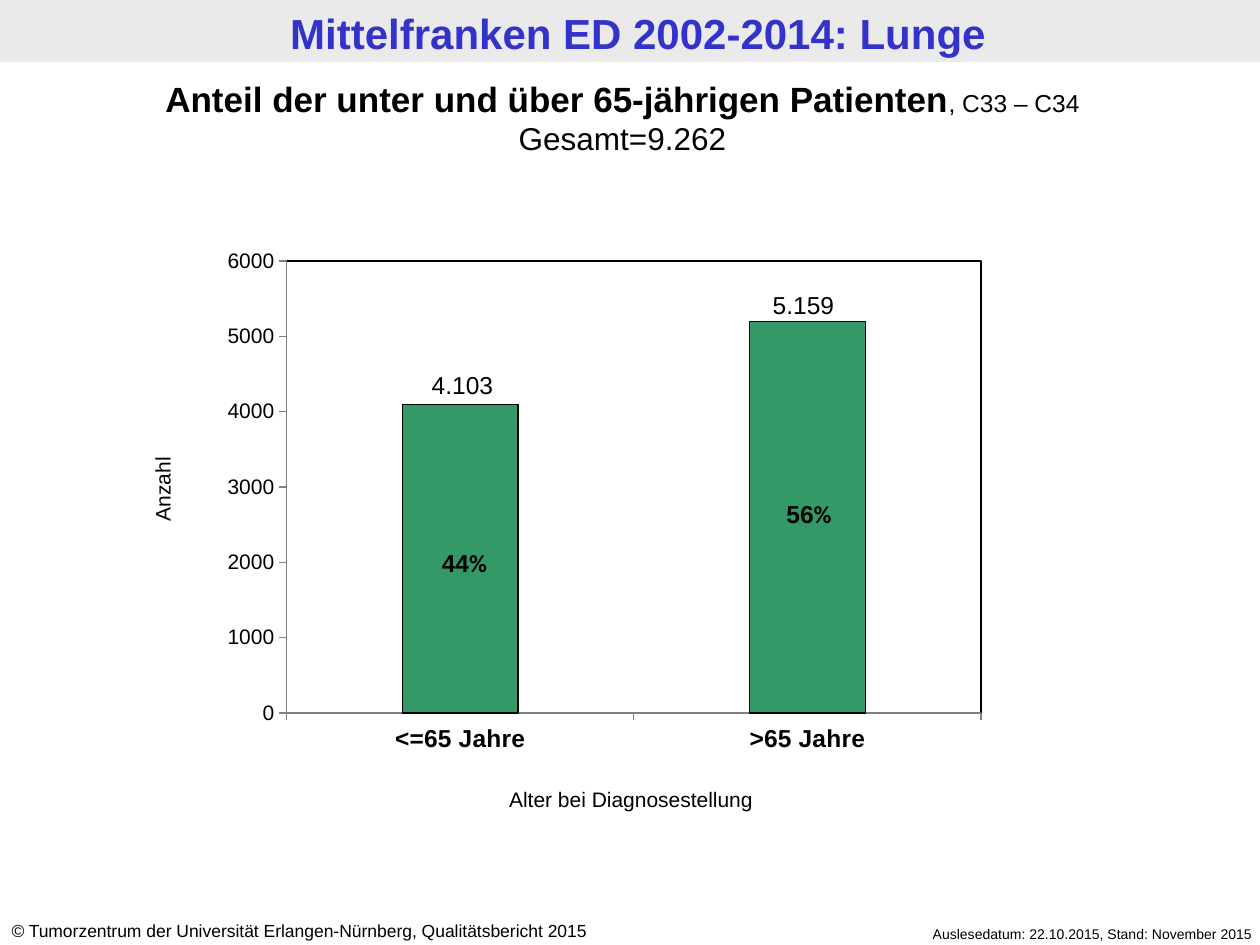
import pptx
import pptx.chart.data
import pptx.dml.color
import pptx.enum.chart
import pptx.enum.shapes
import pptx.enum.text
import pptx.oxml
import pptx.oxml.ns
import pptx.util

SCALE = 914400 / 126
ALIGN = pptx.enum.text.PP_ALIGN
BLACK = "000000"
AXIS_GREY = "808080"


def px(length):
    return pptx.util.Emu(round(length * SCALE))


def colour(code):
    return pptx.dml.color.RGBColor.from_string(code)


def set_font(font, size, code=BLACK, **extra):
    values = {"name": "Arial", "size": pptx.util.Pt(size), "bold": False, **extra}
    for key, value in values.items():
        setattr(font, key, value)
    font.color.rgb = colour(code)


def set_line(line, code, width=0.75):
    line.color.rgb = colour(code)
    line.width = pptx.util.Pt(width)


def fill_text(box, paragraphs, align):
    frame = box.text_frame
    values = {
        "word_wrap": True,
        "auto_size": pptx.enum.text.MSO_AUTO_SIZE.NONE,
        "vertical_anchor": pptx.enum.text.MSO_ANCHOR.TOP,
    }
    for key, value in values.items():
        setattr(frame, key, value)
    for index, runs in enumerate(paragraphs):
        paragraph = frame.add_paragraph() if index else frame.paragraphs[0]
        paragraph.alignment = align
        for text, style in runs:
            run = paragraph.add_run()
            run.text = text
            set_font(run.font, **style)


def add_text(slide, place, runs, align=ALIGN.CENTER, rotation=0):
    box = slide.shapes.add_textbox(*map(px, place))
    box.rotation = rotation
    fill_text(box, [runs], align)


def add_band(slide, place, code):
    band = slide.shapes.add_shape(
        pptx.enum.shapes.MSO_SHAPE.RECTANGLE, *map(px, place)
    )
    band.shadow.inherit = False
    band.fill.solid()
    band.fill.fore_color.rgb = colour(code)
    band.line.fill.background()


def set_title(slide, place, paragraphs):
    title = slide.shapes.title
    for key, length in zip(("left", "top", "width", "height"), place):
        setattr(title, key, px(length))
    fill_text(title, paragraphs, ALIGN.CENTER)


def frame_plot(chart, x, y, w, h):
    names = pptx.oxml.ns.nsdecls("c", "a")
    area = chart._chartSpace.chart.plotArea
    for old in area.findall(pptx.oxml.ns.qn("c:layout")):
        area.remove(old)
    sizes = "".join(
        f'<c:{key} val="{value}"/>' for key, value in zip("xywh", (x, y, w, h))
    )
    area.insert(0, pptx.oxml.parse_xml(
        f'<c:layout {names}><c:manualLayout><c:layoutTarget val="inner"/>'
        f'<c:xMode val="edge"/><c:yMode val="edge"/>{sizes}'
        "</c:manualLayout></c:layout>"
    ))
    area.append(pptx.oxml.parse_xml(
        f'<c:spPr {names}><a:noFill/><a:ln w="9525"><a:solidFill>'
        f'<a:srgbClr val="{BLACK}"/></a:solidFill></a:ln></c:spPr>'
    ))


def add_age_chart(slide, place, ages, counts):
    data = pptx.chart.data.CategoryChartData()
    data.categories = ages
    data.add_series("Anzahl", counts)
    chart = slide.shapes.add_chart(
        pptx.enum.chart.XL_CHART_TYPE.COLUMN_STACKED, *map(px, place), data
    ).chart
    chart.has_legend = False
    chart.has_title = False
    set_font(chart.font, 18, name="Calibri")

    plot = chart.plots[0]
    for key, value in {"gap_width": 200, "overlap": 100, "vary_by_categories": False}.items():
        setattr(plot, key, value)
    bars = plot.series[0].format
    bars.fill.solid()
    bars.fill.fore_color.rgb = colour("339966")
    set_line(bars.line, BLACK)

    scale = {"minimum_scale": 0, "maximum_scale": 6000, "major_unit": 1000}
    for key, value in scale.items():
        setattr(chart.value_axis, key, value)
    chart.value_axis.tick_labels.number_format = "0"
    chart.value_axis.tick_labels.number_format_is_linked = False
    for axis, size, bold in ((chart.category_axis, 14, True), (chart.value_axis, 12, False)):
        axis.has_major_gridlines = False
        axis.major_tick_mark = pptx.enum.chart.XL_TICK_MARK.OUTSIDE
        set_font(axis.tick_labels.font, size, bold=bold)
        set_line(axis.format.line, AXIS_GREY)
    frame_plot(chart, 0.11, 0.14, 0.79, 0.77)


def main():
    deck = pptx.Presentation()
    deck.slide_width, deck.slide_height = px(1260), px(945)
    slide = deck.slides.add_slide(deck.slide_layouts[5])

    set_title(slide, (0, 71, 1245, 93), [
        [("Anteil der unter und über 65-jährigen Patienten", {"size": 20, "bold": True}),
         (", C33 – C34", {"size": 14})],
        [("Gesamt=9.262", {"size": 18})],
    ])
    add_band(slide, (0, 0, 1260, 62), "EAEAEA")
    add_text(slide, (8, 1, 1260, 62), [
        ("Mittelfranken ED 2002-2014: Lunge", {"size": 24, "code": "3333CC", "bold": True}),
    ])
    add_text(slide, (838, 919, 427, 30), [
        ("Auslesedatum: 22.10.2015, Stand: November 2015", {"size": 8}),
    ], ALIGN.RIGHT)
    add_text(slide, (-1, 914, 660, 34), [
        ("©", {"size": 10, "italic": True}),
        (" Tumorzentrum der Universität Erlangen-Nürnberg, Qualitätsbericht 2015", {"size": 10}),
    ], ALIGN.LEFT)

    add_age_chart(slide, (190, 179, 879, 587), ["<=65 Jahre", ">65 Jahre"], [4100, 5200])
    for share, place in (("44", (402, 542, 125, 43)), ("56", (749, 493, 120, 43))):
        add_text(slide, place, [
            (share, {"size": 14, "bold": True}),
            ("%", {"size": 14, "bold": True, "name": "Calibri"}),
        ])
    add_text(slide, (421, 780, 420, 38), [("Alter bei Diagnosestellung", {"size": 12})])
    add_text(slide, (-2, 470, 329, 38), [("Anzahl", {"size": 12})], rotation=270)
    for count, place in (("4.103", (398, 364, 129, 43)), ("5.159", (739, 284, 129, 43))):
        add_text(slide, place, [(count, {"size": 14})])

    deck.save("out.pptx")


if __name__ == "__main__":
    main()
